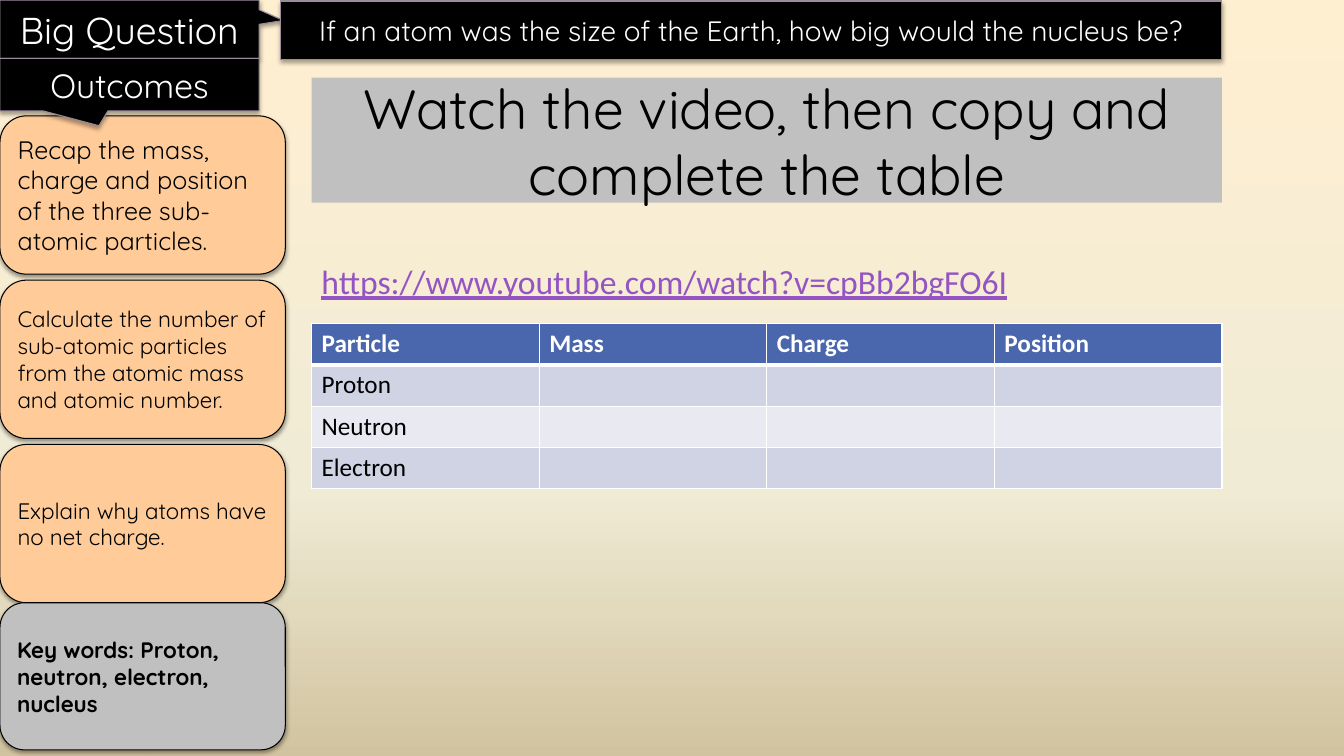
import copy

import pptx
import pptx.dml.color
import pptx.enum.shapes
import pptx.enum.text
import pptx.oxml
import pptx.oxml.ns
import pptx.util

RGB = pptx.dml.color.RGBColor
SHAPE = pptx.enum.shapes.MSO_SHAPE
ALIGN = pptx.enum.text.PP_ALIGN
MIDDLE = pptx.enum.text.MSO_ANCHOR.MIDDLE
Inches, Pt = pptx.util.Inches, pptx.util.Pt
qn = pptx.oxml.ns.qn

BLACK = RGB(0, 0, 0)
WHITE = RGB(255, 255, 255)
MAUVE = RGB(0x9A, 0x8C, 0x9D)
PEACH = RGB(0xFF, 0xCC, 0x99)
GREY = RGB(0xC0, 0xC0, 0xC0)
BLUE = RGB(0x4A, 0x66, 0xAC)
BAND_DARK = RGB(0xD0, 0xD3, 0xE3)
BAND_LIGHT = RGB(0xE9, 0xEA, 0xF1)
VIOLET = RGB(0x94, 0x54, 0xC3)
BACKDROP = [(0, RGB(0xFF, 0xEF, 0xD1)), (0.65, RGB(0xF0, 0xEB, 0xD5)),
            (1, RGB(0xD1, 0xC3, 0x9F))]

DISPLAY, BODY = "Quicksand", "Calibri"
BANNER_W, BANNER_H = 2.57, 0.58
CARD_W, CARD_H, CARD_TOP, CARD_PITCH = 2.83, 1.57, 1.15, 1.63
MAIN_X, MAIN_W = 3.09, 9.03
ROW_H = 0.41

OUTCOMES = [
    ("Recap the mass, charge and position of the three sub-atomic particles.", 18),
    ("Calculate the number of sub-atomic particles from the atomic mass "
     "and atomic number.", 16),
    ("Explain why atoms have no net charge.", 16),
]
HEADERS = ["Particle", "Mass", "Charge", "Position"]
PARTICLES = ["Proton", "Neutron", "Electron"]


def set_font(p, size, color, name=DISPLAY, bold=False):
    font = p.font
    font.size, font.name, font.bold = Pt(size), name, bold
    font.color.rgb = color


def add_shadow(sp, opacity, distance):
    sp.shadow.inherit = False
    effects = sp._element.spPr.find(qn("a:effectLst"))
    effects.append(pptx.oxml.parse_xml(
        f'<a:outerShdw {pptx.oxml.ns.nsdecls("a")} blurRad="{Pt(3.1)}" '
        f'dist="{Pt(distance)}" dir="5400000" rotWithShape="0">'
        f'<a:srgbClr val="000000"><a:alpha val="{opacity * 1000}"/></a:srgbClr>'
        '</a:outerShdw>'))


def add_box(s, kind, box, text, size, fill, line, color, align, bold=False):
    sp = s.shapes.add_shape(kind, *map(Inches, box))
    sp.fill.solid()
    sp.fill.fore_color.rgb = fill
    sp.line.color.rgb = line
    sp.line.width = Pt(0.75)
    tf = sp.text_frame
    tf.word_wrap, tf.vertical_anchor = True, MIDDLE
    p = tf.paragraphs[0]
    p.text, p.alignment = text, align
    set_font(p, size, color, bold=bold)
    return sp


def add_banner(s, box, text, size, pointer=None):
    """Add a black label; pointer is the callout tip relative to its centre."""
    kind = SHAPE.RECTANGULAR_CALLOUT if pointer else SHAPE.RECTANGLE
    sp = add_box(s, kind, box, text, size, BLACK, MAUVE, WHITE, ALIGN.CENTER)
    for i, offset in enumerate(pointer or ()):
        sp.adjustments[i] = offset
    add_shadow(sp, 35, 1.8)


def add_card(s, top, height, text, size, fill, bold=False):
    sp = add_box(s, SHAPE.ROUNDED_RECTANGLE, (0, top, CARD_W, height), text,
                 size, fill, BLACK, BLACK, ALIGN.LEFT, bold)
    add_shadow(sp, 38, 1.6)


def set_backdrop(s):
    fill = s.background.fill
    fill.gradient()
    fill.gradient_angle = 270
    stops = s._element.find(".//" + qn("a:gsLst"))
    stops.insert(1, copy.deepcopy(stops[0]))
    for stop, (position, color) in zip(fill.gradient_stops, BACKDROP):
        stop.position = position
        stop.color.rgb = color


def set_title(s, text):
    sp = s.shapes.title
    sp.left, sp.top, sp.width, sp.height = map(Inches, (MAIN_X, 0.77, MAIN_W, 1.24))
    sp.fill.solid()
    sp.fill.fore_color.rgb = GREY
    tf = sp.text_frame
    tf.auto_size = pptx.enum.text.MSO_AUTO_SIZE.NONE
    tf.word_wrap, tf.vertical_anchor = True, MIDDLE
    p = tf.paragraphs[0]
    p.text, p.alignment = text, ALIGN.CENTER
    set_font(p, 39.5, BLACK)


def add_address(s, text):
    sp = s.shapes.add_textbox(*map(Inches, (MAIN_X, 2.54, 7.07, 0.5)))
    sp.text_frame.word_wrap = False
    p = sp.text_frame.paragraphs[0]
    p.text = text
    set_font(p, 24, VIOLET, BODY)
    p.font.underline = True


def set_borders(cell, bottom):
    tc_pr = cell._tc.get_or_add_tcPr()
    for i, (side, width) in enumerate((("L", 1), ("R", 1), ("T", 1), ("B", bottom))):
        tc_pr.insert(i, pptx.oxml.parse_xml(
            f'<a:ln{side} {pptx.oxml.ns.nsdecls("a")} w="{Pt(width)}"><a:solidFill>'
            f'<a:srgbClr val="{WHITE}"/></a:solidFill></a:ln{side}>'))


def add_particle_table(s):
    rows = [HEADERS] + [[name, "", "", ""] for name in PARTICLES]
    table = s.shapes.add_table(len(rows), len(HEADERS), Inches(MAIN_X), Inches(3.21),
                               Inches(MAIN_W), Inches(ROW_H * len(rows))).table
    for r, texts in enumerate(rows):
        header = r == 0
        for c, text in enumerate(texts):
            cell = table.cell(r, c)
            cell.fill.solid()
            cell.fill.fore_color.rgb = (
                BLUE if header else BAND_DARK if r % 2 else BAND_LIGHT)
            set_borders(cell, 3 if header else 1)
            p = cell.text_frame.paragraphs[0]
            p.text = text
            set_font(p, 18, WHITE if header else BLACK, BODY, header)


def main():
    prs = pptx.Presentation()
    prs.slide_width, prs.slide_height = Inches(13.33), Inches(7.5)
    s = prs.slides.add_slide(prs.slide_layouts[5])
    set_backdrop(s)
    add_banner(s, (0, 0, BANNER_W, BANNER_H), "Big Question", 26.7, (0.593, -0.15))
    add_banner(s, (2.78, 0.01, 9.34, BANNER_H),
               "If an atom was the size of the Earth, how big would the nucleus be?", 20)
    for i, (text, size) in enumerate(OUTCOMES):
        add_card(s, CARD_TOP + i * CARD_PITCH, CARD_H, text, size, PEACH)
    add_card(s, 5.98, 1.46, "Key words: Proton, neutron, electron, nucleus", 16,
             GREY, bold=True)
    add_banner(s, (0, BANNER_H, BANNER_W, 0.52), "Outcomes", 24, (-0.118, 0.783))
    add_particle_table(s)
    set_title(s, "Watch the video, then copy and complete the table")
    add_address(s, "https://www.youtube.com/watch?v=cpBb2bgFO6I")
    prs.save("out.pptx")


if __name__ == "__main__":
    main()
